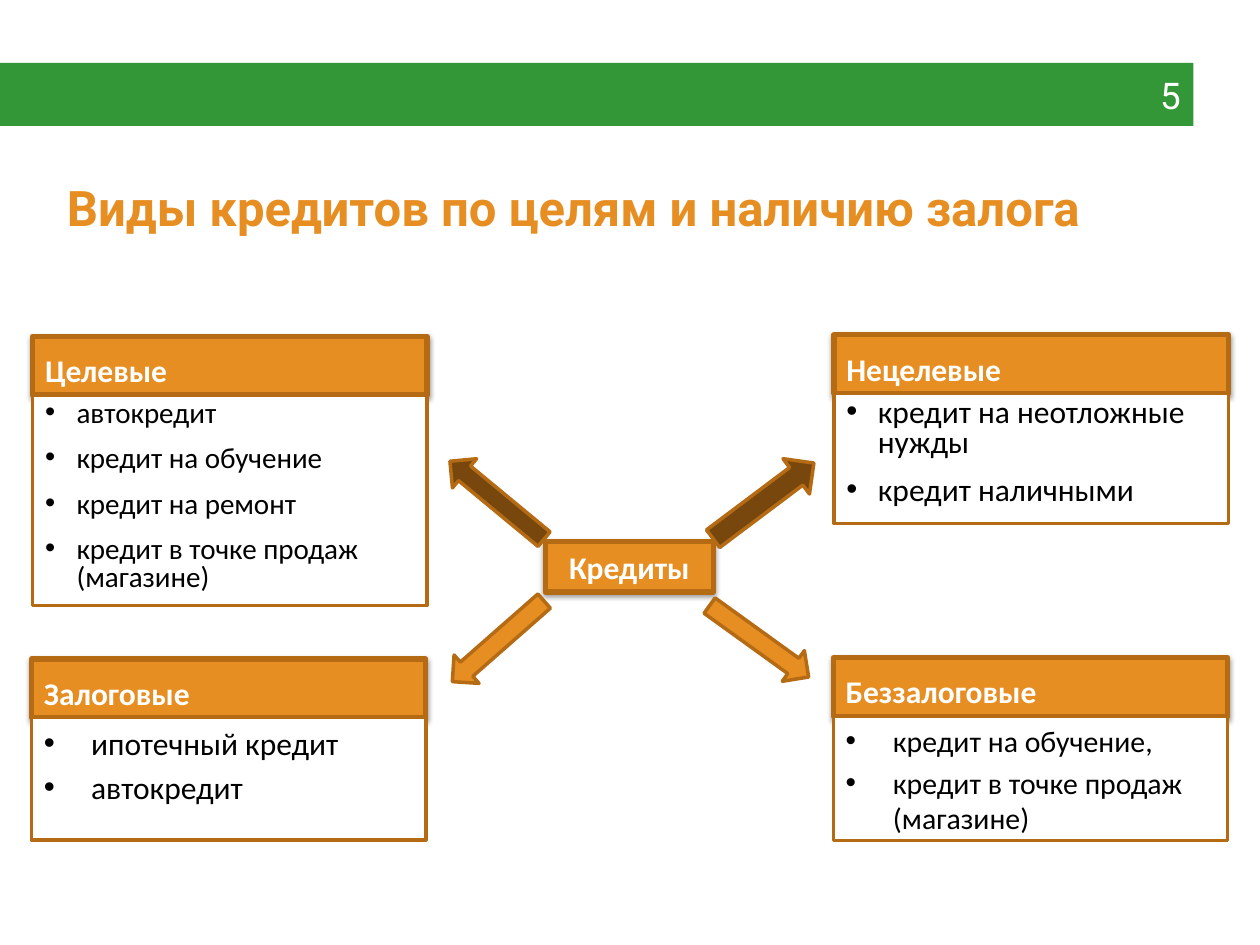
import pptx
import pptx.dml.color
import pptx.enum.shapes
import pptx.enum.text
import pptx.oxml
import pptx.util
from lxml import etree

Pt = pptx.util.Pt
RGB = pptx.dml.color.RGBColor
Kind = pptx.enum.shapes.MSO_SHAPE
Side = pptx.enum.text.PP_ALIGN
Hold = pptx.enum.text.MSO_ANCHOR
Fit = pptx.enum.text.MSO_AUTO_SIZE

GREEN = RGB(0x34, 0x97, 0x37)
AMBER = RGB(0xE7, 0x8E, 0x23)
RUST = RGB(0xB4, 0x6B, 0x14)
BROWN = RGB(0x78, 0x47, 0x0D)
WHITE = RGB(0xFF, 0xFF, 0xFF)
BLACK = RGB(0, 0, 0)

SHADOW = (
    '<a:outerShdw xmlns:a="http://schemas.openxmlformats.org/drawingml/2006/main" '
    'blurRad="39370" dist="20320" dir="5400000" rotWithShape="0">'
    '<a:srgbClr val="000000"><a:alpha val="38000"/></a:srgbClr></a:outerShdw>'
)
WIDE = 225.4
TIGHT = {"line_spacing": 0.8, "space_before": Pt(10)}
LOOSE = {"space_before": Pt(3.6)}


def apply(target, form):
    for name, value in form.items():
        setattr(target, name, value)


class Deck:
    title_font = {"name": "Roboto", "size": Pt(28), "bold": True}
    page_font = {"name": "Roboto", "size": Pt(21), "bold": False}
    head_font = {"name": "Calibri", "size": Pt(18), "bold": True}
    item_font = {"name": "Calibri", "bold": False}

    def __init__(self, show):
        self.slide = show.slides.add_slide(show.slide_layouts[5])
        self.shapes = self.slide.shapes

    def shape(self, kind, box, fill, line=0):
        shape = self.shapes.add_shape(kind, *map(Pt, box))
        shape.shadow.inherit = False
        shape.fill.solid()
        shape.fill.fore_color.rgb = fill
        if line:
            shape.line.color.rgb = RUST
            shape.line.width = Pt(line)
        else:
            shape.line.fill.background()
        return shape

    def label(self, frame, texts, font, color, form, anchor=Hold.TOP):
        apply(frame, {"word_wrap": True, "vertical_anchor": anchor})
        for i, text in enumerate(texts):
            para = frame.add_paragraph() if i else frame.paragraphs[0]
            apply(para, form)
            run = para.add_run()
            run.text = text
            apply(run.font, font)
            run.font.color.rgb = color

    def title(self, text, box):
        shape = self.shapes.title
        apply(shape, dict(zip(("left", "top", "width", "height"), map(Pt, box))))
        frame = shape.text_frame
        sides = ("margin_left", "margin_top", "margin_right", "margin_bottom")
        apply(frame, dict.fromkeys(sides, 0))
        frame.auto_size = Fit.NONE
        self.label(frame, [text], self.title_font, AMBER, {"alignment": Side.LEFT})

    def page(self, text, box):
        frame = self.shapes.add_textbox(*map(Pt, box)).text_frame
        form = {"alignment": Side.RIGHT}
        self.label(frame, [text], self.page_font, WHITE, form, Hold.MIDDLE)

    def head(self, text, box, form, anchor):
        shape = self.shape(Kind.RECTANGLE, box, AMBER, 3)
        glow = shape._element.spPr.find(pptx.oxml.ns.qn("a:effectLst"))
        glow.append(etree.fromstring(SHADOW))
        self.label(shape.text_frame, [text], self.head_font, WHITE, form, anchor)

    def items(self, texts, box, size, indent, form):
        frame = self.shape(Kind.RECTANGLE, box, WHITE, 2).text_frame
        font = {**self.item_font, "size": Pt(size)}
        self.label(frame, texts, font, BLACK, {"alignment": Side.LEFT, **form})
        for para in frame.paragraphs:
            props = para._p.get_or_add_pPr()
            props.set("marL", str(Pt(indent)))
            props.set("indent", str(-Pt(indent)))
            for tag, key, value in (("buFont", "typeface", "Arial"), ("buChar", "char", "•")):
                etree.SubElement(props, pptx.oxml.ns.qn("a:" + tag)).set(key, value)

    def card(self, text, texts, left, top, tall, size, indent, form):
        head = {"alignment": Side.LEFT, **LOOSE}
        self.head(text, (left, top, WIDE, 33.6), head, Hold.BOTTOM)
        self.items(texts, (left, top + 33.4, WIDE, tall), size, indent, form)

    def arrow(self, box, turn, fill):
        self.shape(Kind.RIGHT_ARROW, box, fill, 2).rotation = turn


def main():
    show = pptx.Presentation()
    apply(show, {"slide_width": Pt(720), "slide_height": Pt(540)})
    deck = Deck(show)
    deck.shape(Kind.RECTANGLE, (0, 36, 682, 36), GREEN)
    deck.title("Виды кредитов по целям и наличию залога", (38.2, 101.5, 643.7, 61.2))

    cards = (
        ("Целевые", ["автокредит", "кредит на обучение", "кредит на ремонт",
                     "кредит в точке продаж (магазине)"],
         18.7, 192.2, 120.4, 16.6, 18, TIGHT),
        ("Нецелевые", ["кредит на неотложные нужды", "кредит наличными"],
         476.6, 191.3, 74.4, 18, 18, TIGHT),
        ("Залоговые", ["ипотечный кредит", "автокредит"],
         18, 376.6, 70, 18, 27, LOOSE),
        ("Беззалоговые", ["кредит на обучение,", "кредит в точке продаж (магазине)"],
         476.2, 375.8, 71, 17, 27, LOOSE),
    )
    for card in cards:
        deck.card(*card)

    deck.head("Кредиты", (311.6, 309.6, 96, 28.8), {"alignment": Side.CENTER}, Hold.MIDDLE)
    arrows = (
        ((400.3, 273.6, 72, 25.2), 323.1, BROWN),
        ((398.9, 355.7, 69.8, 21.6), 35.8, AMBER),
        ((249.8, 355.7, 69.8, 21.6), 138.7, AMBER),
        ((249.1, 275, 69.8, 21.6), 219.6, BROWN),
    )
    for arrow in arrows:
        deck.arrow(*arrow)
    deck.page("5", (568.8, 39.6, 113, 28.8))
    show.save("out.pptx")


if __name__ == "__main__":
    main()
